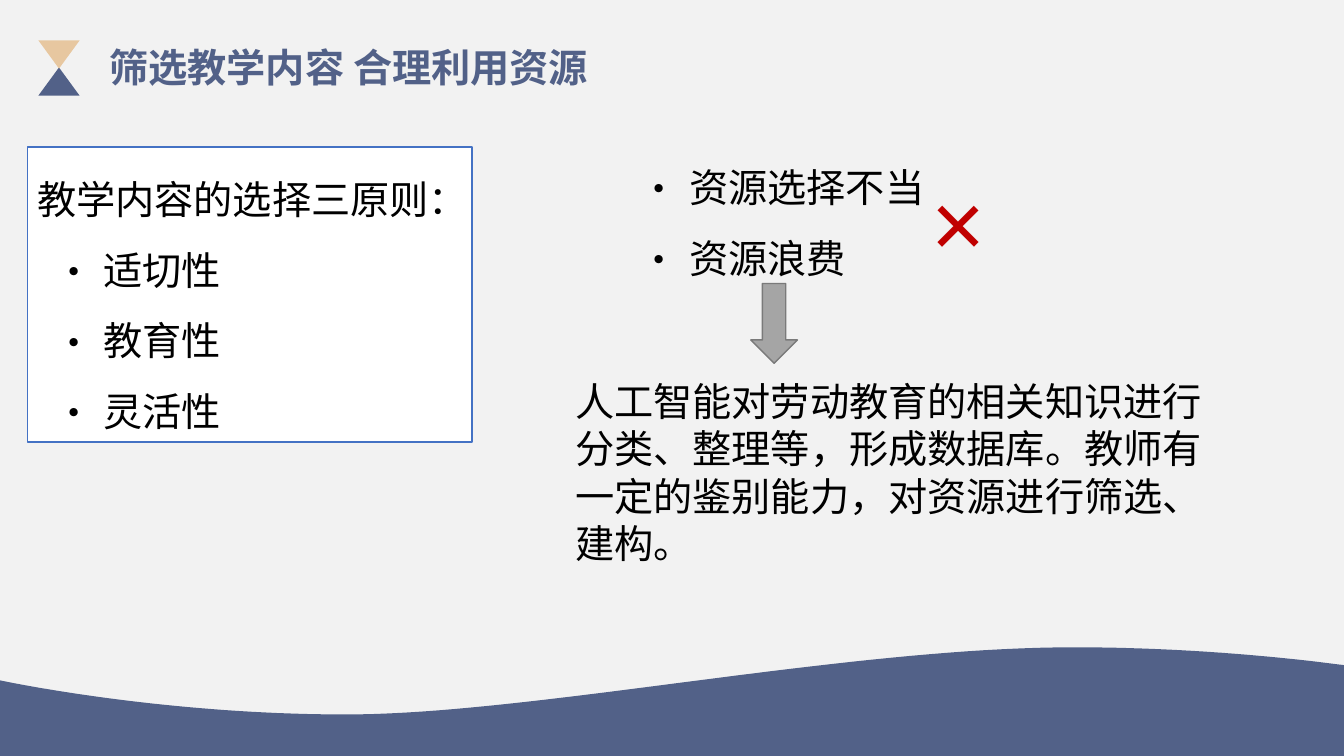
from lxml.etree import SubElement as Sub
from pptx import Presentation
from pptx.dml.color import RGBColor as RGB
from pptx.enum.shapes import MSO_SHAPE as Kind
from pptx.enum.text import MSO_ANCHOR as Anchor, MSO_AUTO_SIZE as Auto, PP_ALIGN as Align
from pptx.oxml.ns import qn
from pptx.util import Inches, Pt

NAVY = RGB(0x52, 0x61, 0x88)
SAND = RGB(0xE7, 0xC7, 0xA0)
PALE = RGB(0xF2, 0xF2, 0xF2)
WHITE = RGB(0xFF, 0xFF, 0xFF)
BLACK = RGB(0, 0, 0)
BLUE = RGB(0x44, 0x72, 0xC4)
RED = RGB(0xC0, 0, 0)
GRAY = RGB(0xA5, 0xA5, 0xA5)
DARK = RGB(0x7A, 0x7A, 0x7A)

COLS, ROWS = 128, 72  # the grid that all lengths refer to


def curve(a, b, c, d, steps=40):
    """Points of a cubic curve after its start."""
    for i in range(1, steps + 1):
        t = i / steps
        u = 1 - t
        yield tuple(u**3 * p + 3 * u * u * t * q + 3 * u * t * t * r + t**3 * s
                    for p, q, r, s in zip(a, b, c, d))


class Deck:
    font = "Noto Sans CJK SC"
    size = 28

    def __init__(self):
        self.show = Presentation()
        self.show.slide_width, self.show.slide_height = Inches(40 / 3), Inches(7.5)
        self.slide = self.show.slides.add_slide(self.show.slide_layouts[5])
        back = self.slide.background.fill
        back.solid()
        back.fore_color.rgb = PALE

    def grid(self, *spans):
        """Turn column and row counts, in turn, into lengths."""
        units = (self.show.slide_width / COLS, self.show.slide_height / ROWS)
        return [round(n * units[i % 2]) for i, n in enumerate(spans)]

    def paint(self, shape, fill, line=None):
        shape.shadow.inherit = False
        shape.fill.solid()
        shape.fill.fore_color.rgb = fill
        if line is None:
            shape.line.fill.background()
        else:
            shape.line.color.rgb = line
            shape.line.width = Pt(1)
        return shape

    def shape(self, kind, spot, fill, line=None, turn=0):
        item = self.slide.shapes.add_shape(kind, *self.grid(*spot))
        item.rotation = turn
        return self.paint(item, fill, line)

    def wave(self, start, points, fill):
        form = self.slide.shapes.build_freeform(*self.grid(*start))
        form.add_line_segments([self.grid(*p) for p in points], close=True)
        self.paint(form.convert_to_shape(), fill)

    def title(self, spot, text):
        item = self.slide.shapes.title
        item.left, item.top, item.width, item.height = self.grid(*spot)
        self.label(item, [text], NAVY, align=Align.CENTER, bold=True)

    def text(self, spot, lines, **style):
        self.label(self.slide.shapes.add_textbox(*self.grid(*spot)), lines, **style)

    def label(self, item, lines, color=BLACK, font=None, size=None, space=None,
              align=Align.LEFT, bold=False, lead=0, dent=None):
        """Fill a shape; lines from number lead on get bullets if dent is set."""
        frame = item.text_frame
        frame.word_wrap = True
        frame.auto_size = Auto.NONE
        frame.vertical_anchor = Anchor.TOP
        frame.text = "\n".join(lines)
        for i, para in enumerate(frame.paragraphs):
            para.alignment = align
            if space:
                para.line_spacing = space
            face = para.font
            face.name, face.size, face.bold = font or self.font, Pt(size or self.size), bold
            face.color.rgb = color
            props = para._p.find(qn("a:pPr"))
            base = props.find(qn("a:defRPr"))
            Sub(base, qn("a:ea"), typeface=face.name)
            if dent is not None and i >= lead:
                self.bullet(props, base, dent)

    def bullet(self, props, base, dent):
        hang = 0.49
        props.set("marL", str(Inches(dent + hang)))
        props.set("indent", str(-Inches(hang)))
        base.addprevious(Sub(props, qn("a:buFont"), typeface=self.font))
        base.addprevious(Sub(props, qn("a:buChar"), char="·"))


def main():
    deck = Deck()

    # Wave along the foot
    left, low, high, right = (0, 64.8), (32.95, 68.05), (102.25, 61.65), (125.2, 63)
    crest = [
        *curve(left, left, (15.05, 68.05), low),
        *curve(low, (50.7, 68.05), (80.65, 61.65), high),
        *curve(high, (110.3, 61.65), (118.25, 62.2), right),
    ]
    deck.wave(left, [*crest, (COLS, 63.35), (COLS, ROWS), (0, ROWS)], NAVY)

    # Hourglass and title
    for top, fill, turn in ((6.43, NAVY, 0), (3.84, SAND, 180)):
        deck.shape(Kind.ISOSCELES_TRIANGLE, (3.65, top, 3.94, 2.69), fill, turn=turn)
    deck.title((7.58, 3.65, 51.26, 5.47), "筛选教学内容 合理利用资源")

    # Three rules
    rules = deck.shape(Kind.RECTANGLE, (2.6, 14, 42.35, 28.1), WHITE, BLUE)
    deck.label(rules, ["教学内容的选择三原则：", "适切性", "教育性", "灵活性"],
               space=1.5, lead=1, dent=0.17)

    # Faults and the remedy
    deck.text((60, 12.85, 35.25, 14.5), ["资源选择不当", "资源浪费"], space=1.5, dent=0)
    deck.text((53.85, 35.5, 65, 19),
              ["人工智能对劳动教育的相关知识进行分类、整理等，形成数据库。"
               "教师有一定的鉴别能力，对资源进行筛选、建构。"])
    deck.text((87.75, 15.25, 14.9, 15.15), ["×"], color=RED, font="Arial", size=66)
    deck.shape(Kind.DOWN_ARROW, (71.5, 27, 4.45, 7.6), GRAY, DARK)

    deck.show.save("out.pptx")


if __name__ == "__main__":
    main()
